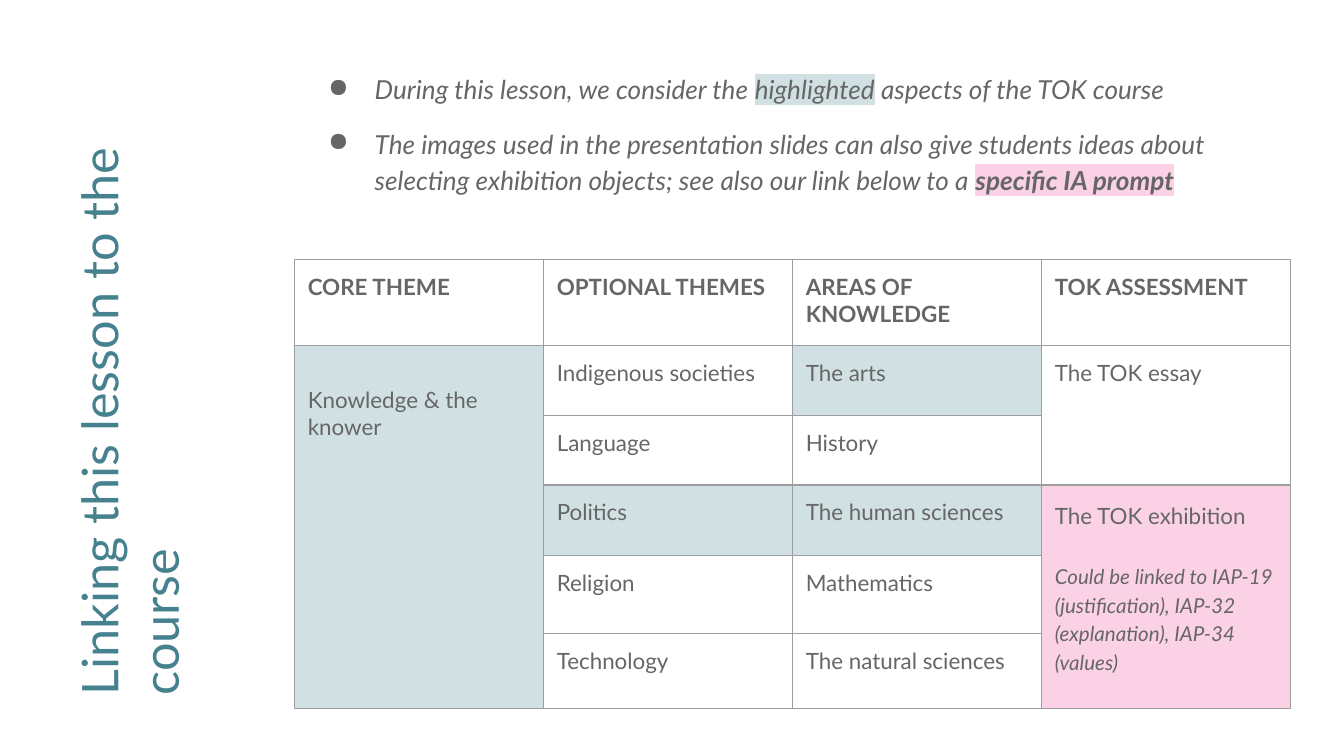
from lxml import etree
from pptx import Presentation
from pptx.dml.color import RGBColor
from pptx.enum import text
from pptx.oxml import ns
from pptx.util import Pt

TEAL = RGBColor(0x45, 0x81, 0x8E)
GRAY = RGBColor(0x66, 0x66, 0x66)
LINE = RGBColor(0x9E, 0x9E, 0x9E)
BLUE = RGBColor(0xD0, 0xE0, 0xE3)
PINK = RGBColor(0xFB, 0xD1, 0xE6)
WHITE = RGBColor(0xFF, 0xFF, 0xFF)
FONT = "Lato"
PAD = Pt(7.2)

HEADS = ["CORE THEME", "OPTIONAL THEMES", "AREAS OF KNOWLEDGE", "TOK ASSESSMENT"]
THEMES = ["Indigenous societies", "Language", "Politics", "Religion", "Technology"]
AREAS = ["The arts", "History", "The human sciences", "Mathematics",
         "The natural sciences"]
MARKED = {"Politics", "The arts", "The human sciences"}
ROWS = [46.1, 37.4, 37.2, 37.9, 41.8, 40.2]
COL = 133.4


def add_tag(parent, tag, **attrs):
    return etree.SubElement(parent, ns.qn(tag), attrs)


def add_color(parent, color):
    add_tag(parent, "a:srgbClr", val=str(color))


def style(para, size, color=GRAY, bold=False, italic=False):
    font = para.font
    font.name, font.size = FONT, Pt(size)
    font.bold, font.italic = bold, italic
    font.color.rgb = color


def pad(frame):
    frame.margin_left = frame.margin_right = PAD
    frame.margin_top = frame.margin_bottom = PAD


def add_title(slide, words):
    title = slide.shapes.title
    title.left, title.top = Pt(-95), Pt(153.4)
    title.width, title.height = Pt(350.6), Pt(102.2)
    title.rotation = 270
    frame = title.text_frame
    pad(frame)
    frame.word_wrap = True
    frame.auto_size = text.MSO_AUTO_SIZE.NONE
    frame.vertical_anchor = text.MSO_ANCHOR.TOP
    frame.text = words
    para = frame.paragraphs[0]
    para.alignment = text.PP_ALIGN.LEFT
    style(para, 27, TEAL)


def add_bullet(para, parts):
    props = para._p.get_or_add_pPr()
    props.set("marL", str(Pt(36)))
    props.set("indent", str(Pt(-25)))
    add_color(add_tag(props, "a:buClr"), GRAY)
    add_tag(props, "a:buChar", char="●")
    para.line_spacing = 1.15
    style(para, 14, italic=True)
    for words, mark, bold in parts:
        run = para.add_run()
        run.text = words
        if bold:
            run.font.bold = True
        if mark:
            add_color(add_tag(run._r.get_or_add_rPr(), "a:highlight"), mark)


def add_notes(slide):
    box = slide.shapes.add_textbox(Pt(157.7), Pt(29.5), Pt(537.8), Pt(87.8))
    frame = box.text_frame
    frame.word_wrap = True
    pad(frame)
    add_bullet(frame.paragraphs[0], [
        ("During this lesson, we consider the ", None, False),
        ("highlighted", BLUE, False),
        (" aspects of the TOK course", None, False)])
    para = frame.add_paragraph()
    para.space_before = para.space_after = Pt(10)
    add_bullet(para, [
        ("The images used in the presentation slides can also give students "
         "ideas about selecting exhibition objects; see also our link below "
         "to a ", None, False),
        ("specific IA prompt", PINK, True)])


def dress(cell):
    pad(cell)
    props = cell._tc.get_or_add_tcPr()
    for side in "LRTB":
        edge = add_tag(props, f"a:ln{side}", w=str(Pt(0.75)))
        add_color(add_tag(edge, "a:solidFill"), LINE)
    cell.fill.background()


def fill_cell(cell, words, color=None, bold=False):
    cell.text = words
    style(cell.text_frame.paragraphs[0], 12, bold=bold)
    if color:
        cell.fill.solid()
        cell.fill.fore_color.rgb = color


def add_grid(slide):
    frame = slide.shapes.add_table(len(ROWS), len(HEADS), Pt(157.7), Pt(139.2),
                                   Pt(COL * len(HEADS)), Pt(sum(ROWS)))
    table = frame.table
    table.first_row = table.horz_banding = False
    for col in table.columns:
        col.width = Pt(COL)
    for row, height in zip(table.rows, ROWS):
        row.height = Pt(height)
    for cell in table.iter_cells():
        dress(cell)
    for start, end, col in [(1, 5, 0), (1, 2, 3), (3, 5, 3)]:
        table.cell(start, col).merge(table.cell(end, col))

    for i, head in enumerate(HEADS):
        fill_cell(table.cell(0, i), head, WHITE, True)
    for j, names in enumerate([THEMES, AREAS], 1):
        for i, name in enumerate(names, 1):
            fill_cell(table.cell(i, j), name, BLUE if name in MARKED else None)

    core = table.cell(1, 0)
    fill_cell(core, "Knowledge & the knower", BLUE)
    core.margin_top = Pt(21.6)
    fill_cell(table.cell(1, 3), "The TOK essay")
    show = table.cell(3, 3)
    fill_cell(show, "The TOK exhibition", PINK)
    show.text_frame.paragraphs[0].line_spacing = 1.15
    para = show.text_frame.add_paragraph()
    para.text = ("Could be linked to IAP-19 (justification), IAP-32 "
                 "(explanation), IAP-34 (values)")
    para.line_spacing = 1.15
    para.space_before = Pt(16.6)
    style(para, 11, italic=True)


def main():
    deck = Presentation()
    deck.slide_width, deck.slide_height = Pt(720), Pt(405)
    slide = deck.slides.add_slide(deck.slide_layouts[5])
    add_title(slide, "Linking this lesson to the course")
    add_notes(slide)
    add_grid(slide)
    deck.save("out.pptx")


if __name__ == "__main__":
    main()
